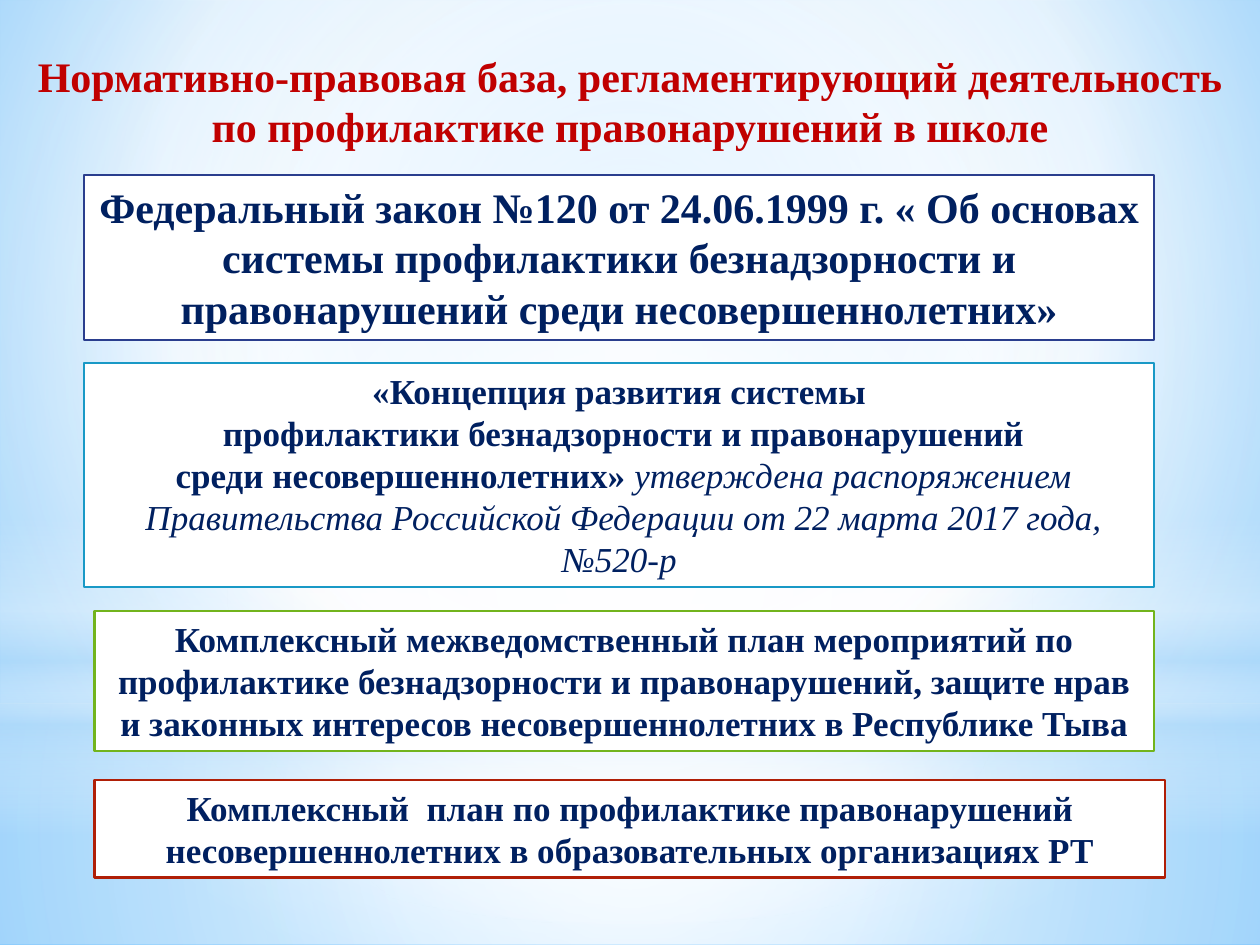
import pptx
import pptx.util
import pptx.dml.color
import pptx.enum.shapes
import pptx.enum.text
import pptx.oxml
import pptx.oxml.ns

Pt = pptx.util.Pt
Kind = pptx.enum.shapes.MSO_SHAPE
WIDE, HIGH = 720, 540
MID = (50, 50, 50, 50)
NAVY, RED = "002060", "C00000"

BACK = [(0, "9ED5FF", 100), (60, "FFFFFF", 100), (100, "5BB9FF", 100)]
LAYERS = [
    (Kind.RECTANGLE, 402, 138, MID,
     [(0, "FFFFFF", 91), (37, "FFFFFF", 76), (100, "B4DCFA", 79)]),
    (Kind.RECTANGLE, 0, 402, MID,
     [(0, "FFFFFF", 89), (48, "FFFFFF", 62), (100, "B4DCFA", 79)]),
    (Kind.RECTANGLE, 296.6, 180, None,
     [(0, "FFFFFF", 0), (29, "FFFFFF", 30), (45, "B4DCFA", 40),
      (55, "FFFFFF", 26), (65, "B4DCFA", 60), (100, "FFFFFF", 0)]),
    (Kind.OVAL, 126, 402, MID, [(0, "FFFFFF", 100), (56, "FFFFFF", 0)]),
]

TITLE = [[("Нормативно-правовая база, регламентирующий деятельность "
           "по профилактике правонарушений в школе", True)]]
BOXES = [
    ((48.2, 100.1, 611.3, 94.3), "2A3E8E", 24, [
        [("Федеральный закон №120 от 24.06.1999 г. « Об основах системы "
          "профилактики безнадзорности и правонарушений среди "
          "несовершеннолетних»", True)]]),
    ((48.2, 207.4, 611.3, 128.2), "1999C6", 20, [
        [("«Концепция развития системы", True)],
        [(" профилактики безнадзорности и правонарушений", True)],
        [(" среди несовершеннолетних» ", True),
         ("утверждена распоряжением", False)],
        [(" Правительства Российской Федерации от 22 марта 2017 года, "
          "№520-р", False)]]),
    ((54, 349.2, 605.5, 79.9), "72B41D", 20, [
        [("Комплексный межведомственный план мероприятий по профилактике "
          "безнадзорности и правонарушений, защите нрав и законных "
          "интересов несовершеннолетних в Республике Тыва", True)]]),
    ((54, 445.7, 612, 55.8), "B01F07", 20, [
        [("Комплексный  план по профилактике правонарушений "
          "несовершеннолетних в образовательных организациях РТ", True)]]),
]


def color(code):
    return pptx.dml.color.RGBColor.from_string(code)


def apply(item, vals):
    for name, val in vals.items():
        setattr(item, name, val)


def blend(fill, root, stops, focus):
    fill.solid()
    marks = "".join(
        f'<a:gs pos="{pos * 1000}"><a:srgbClr val="{code}">'
        f'<a:alpha val="{alpha * 1000}"/></a:srgbClr></a:gs>'
        for pos, code, alpha in stops)
    if focus:
        sides = " ".join(f'{side}="{val * 1000}"'
                         for side, val in zip("ltrb", focus))
        shade = f'<a:path path="circle"><a:fillToRect {sides}/></a:path>'
    else:
        shade = '<a:lin ang="5400000" scaled="0"/>'
    grad = pptx.oxml.parse_xml(
        f'<a:gradFill {pptx.oxml.ns.nsdecls("a")} rotWithShape="1">'
        f'<a:gsLst>{marks}</a:gsLst>{shade}</a:gradFill>')
    solid = next(root.iter(pptx.oxml.ns.qn("a:solidFill")))
    solid.getparent().replace(solid, grad)


def write(shape, paras, size, code):
    frame = shape.text_frame
    apply(frame, {"word_wrap": True,
                  "auto_size": pptx.enum.text.MSO_AUTO_SIZE.SHAPE_TO_FIT_TEXT,
                  "vertical_anchor": pptx.enum.text.MSO_ANCHOR.TOP})
    for num, runs in enumerate(paras):
        para = frame.add_paragraph() if num else frame.paragraphs[0]
        para.alignment = pptx.enum.text.PP_ALIGN.CENTER
        for text, bold in runs:
            run = para.add_run()
            run.text = text
            apply(run.font, {"name": "Times New Roman", "size": Pt(size),
                             "bold": bold, "italic": not bold})
            run.font.color.rgb = color(code)


def main():
    deck = pptx.Presentation()
    apply(deck, {"slide_width": Pt(WIDE), "slide_height": Pt(HIGH)})
    slide = deck.slides.add_slide(deck.slide_layouts[6])
    shapes = slide.shapes
    blend(slide.background.fill, slide.element, BACK, (20, 10, 20, 60))

    for kind, top, high, focus, stops in LAYERS:
        layer = shapes.add_shape(kind, 0, Pt(top), Pt(WIDE), Pt(high))
        layer.shadow.inherit = False
        layer.line.fill.background()
        blend(layer.fill, layer.element.spPr, stops, focus)

    title = shapes.add_textbox(0, Pt(25.2), Pt(WIDE), Pt(65.5))
    write(title, TITLE, 24, RED)

    for area, edge, size, paras in BOXES:
        box = shapes.add_shape(Kind.RECTANGLE, *map(Pt, area))
        box.shadow.inherit = False
        box.fill.solid()
        box.fill.fore_color.rgb = color("FFFFFF")
        box.line.color.rgb = color(edge)
        box.line.width = Pt(1.25)
        write(box, paras, size, NAVY)

    deck.save("out.pptx")


if __name__ == "__main__":
    main()
